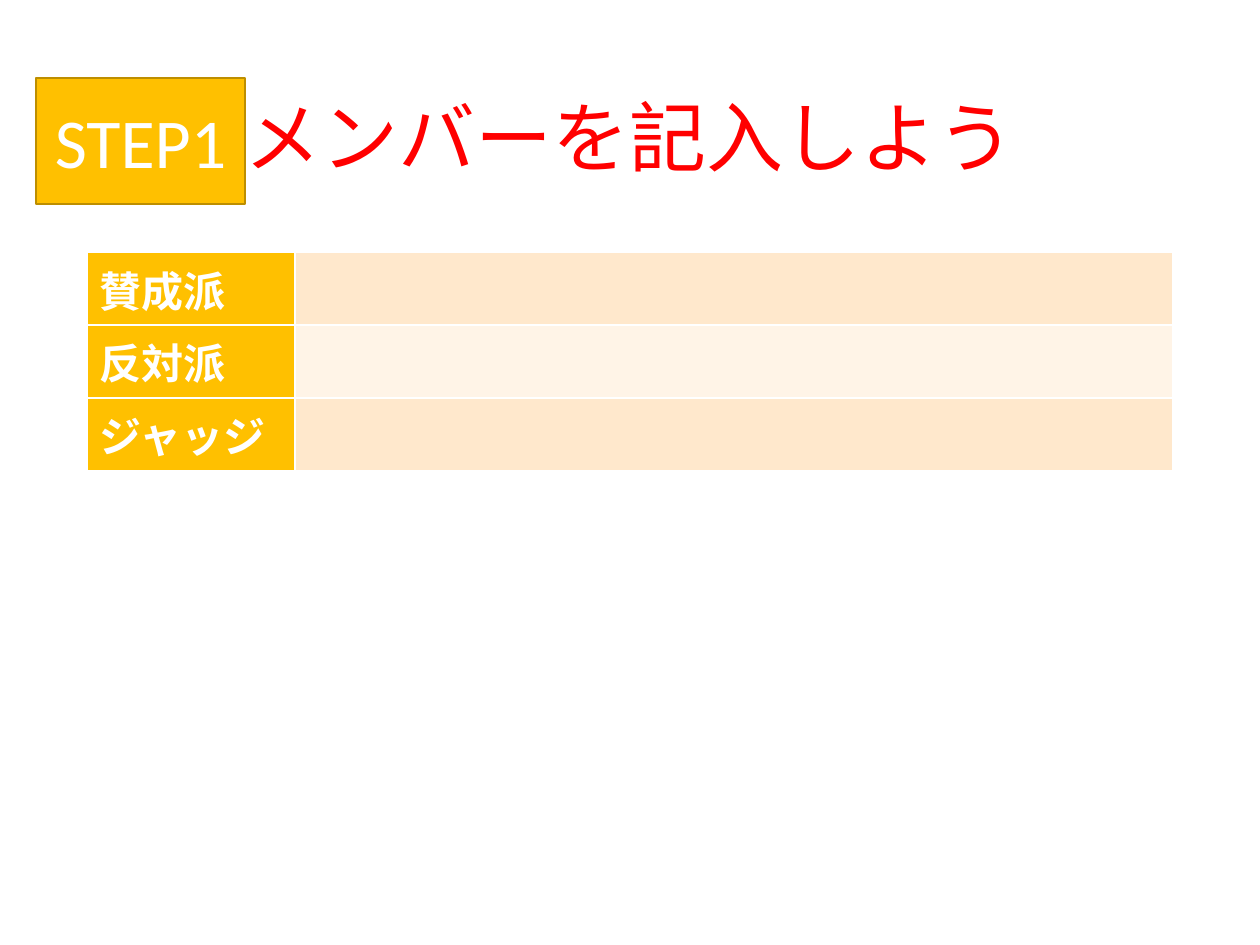
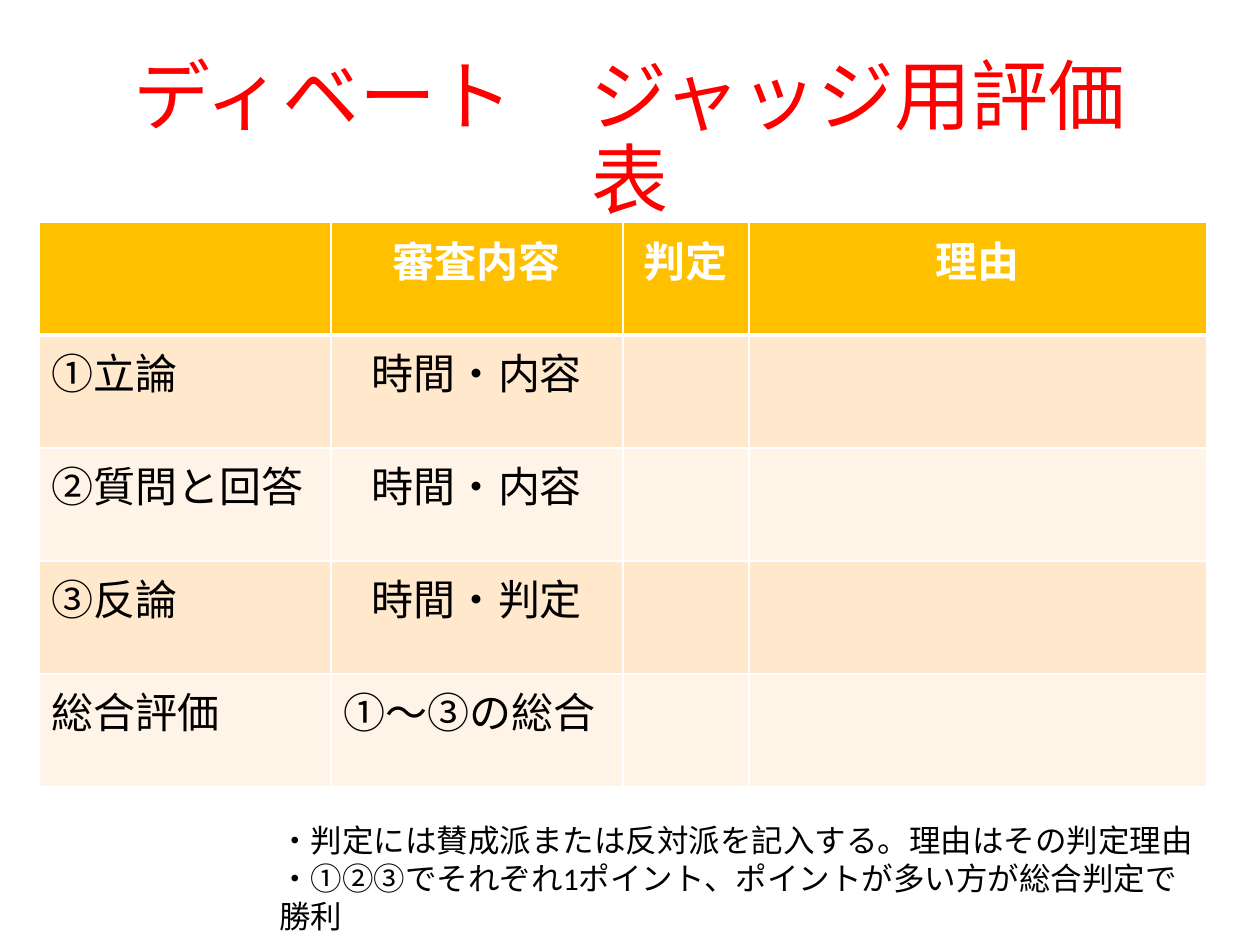
"""Build two debate worksheet slides: the member list and the judge's score sheet."""
from lxml.etree import SubElement
from pptx import Presentation
from pptx.dml.color import RGBColor
from pptx.enum.shapes import MSO_SHAPE
from pptx.enum.text import MSO_ANCHOR, PP_ALIGN
from pptx.oxml.ns import qn
from pptx.util import Emu, Pt

EMU_PER_PIXEL = 914400 / 126
FONT = "Calibri"
COLORS = {
    "title": "FF0000",
    "accent": "FFC000",
    "accent_line": "BD8E00",
    "band_dark": "FFE8CC",
    "band_light": "FFF4E7",
    "white": "FFFFFF",
    "black": "000000",
}
BANDS = ("band_dark", "band_light")
TITLES = ("メンバーを記入しよう", "ディベート\u3000ジャッジ用評価表".replace("\u3000", "　"))
TABLES = (
    {
        "left": 87, "top": 252, "columns": (208, 878), "row_height": 73,
        "header_row": False, "centered": (),
        "rows": (("賛成派", ""), ("反対派", ""), ("ジャッジ", "")),
    },
    {
        "left": 39, "top": 222, "columns": (292, 292, 126, 458), "row_height": 113,
        "header_row": True, "centered": (1, 2, 3),
        "rows": (
            ("", "審査内容", "判定", "理由"),
            ("①立論", "時間・内容", "", ""),
            ("②質問と回答", "時間・内容", "", ""),
            ("③反論", "時間・判定", "", ""),
            ("総合評価", "①～③の総合", "", ""),
        ),
    },
)
NOTES = (
    "・判定には賛成派または反対派を記入する。理由はその判定理由",
    "・①②③でそれぞれ1ポイント、ポイントが多い方が総合判定で勝利",
)


def px(*lengths):
    return [Emu(round(length * EMU_PER_PIXEL)) for length in lengths]


def format_text(text_frame, size, color, alignment=PP_ALIGN.LEFT, bold=False):
    for paragraph in text_frame.paragraphs:
        paragraph.alignment = alignment
        for run in paragraph.runs:
            run.font.name = FONT
            run.font.size = Pt(size)
            run.font.bold = bold
            run.font.color.rgb = RGBColor.from_string(COLORS[color])


presentation = Presentation()
presentation.slide_width, presentation.slide_height = px(1260, 945)
blank_layout = presentation.slide_layouts[6]

for title, layout in zip(TITLES, TABLES):
    slide = presentation.slides.add_slide(blank_layout)
    title_box = slide.shapes.add_textbox(*px(87, 50, 1086, 183))
    title_frame = title_box.text_frame
    title_frame.word_wrap = True
    title_frame.vertical_anchor = MSO_ANCHOR.MIDDLE
    title_frame.text = title
    title_frame.paragraphs[0].line_spacing = 0.9
    format_text(title_frame, 44, "title", PP_ALIGN.CENTER)

    rows, columns = layout["rows"], layout["columns"]
    header_row = layout["header_row"]
    table = slide.shapes.add_table(
        len(rows), len(columns),
        *px(layout["left"], layout["top"], sum(columns), layout["row_height"] * len(rows)),
    ).table
    table.first_row = header_row
    table.first_col = not header_row
    table.horz_banding = False
    for column, width in zip(table.columns, px(*columns)):
        column.width = width
    for row_index, texts in enumerate(rows):
        table.rows[row_index].height = px(layout["row_height"])[0]
        for column_index, text in enumerate(texts):
            cell = table.cell(row_index, column_index)
            is_header = row_index == 0 if header_row else column_index == 0
            cell_properties = cell._tc.get_or_add_tcPr()
            for edge in ("lnL", "lnR", "lnT", "lnB"):
                below_header = header_row and (row_index, edge) in ((0, "lnB"), (1, "lnT"))
                border = SubElement(cell_properties, qn(f"a:{edge}"), w=str(Pt(3 if below_header else 1)))
                border_fill = SubElement(border, qn("a:solidFill"))
                SubElement(border_fill, qn("a:srgbClr"), val=COLORS["white"])
            band = BANDS[(row_index - header_row) % 2]
            cell.fill.solid()
            cell.fill.fore_color.rgb = RGBColor.from_string(COLORS["accent" if is_header else band])
            cell.text_frame.text = text
            is_centered = column_index in layout["centered"] and text != "①～③の総合"
            format_text(
                cell.text_frame, 24, "white" if is_header else "black",
                PP_ALIGN.CENTER if is_centered else PP_ALIGN.LEFT, is_header,
            )

member_slide, score_slide = presentation.slides

step_badge = member_slide.shapes.add_shape(MSO_SHAPE.RECTANGLE, *px(36, 78, 209, 126))
step_badge.shadow.inherit = False
step_badge.fill.solid()
step_badge.fill.fore_color.rgb = RGBColor.from_string(COLORS["accent"])
step_badge.line.color.rgb = RGBColor.from_string(COLORS["accent_line"])
step_badge.line.width = Pt(1)
step_badge.text_frame.vertical_anchor = MSO_ANCHOR.MIDDLE
step_badge.text_frame.text = "STEP1"
format_text(step_badge.text_frame, 40, "white", PP_ALIGN.CENTER)

notes_box = score_slide.shapes.add_textbox(*px(267, 815, 939, 89))
notes_box.text_frame.word_wrap = True
notes_box.text_frame.text = "\n".join(NOTES)
format_text(notes_box.text_frame, 18, "black")

presentation.save("out.pptx")
